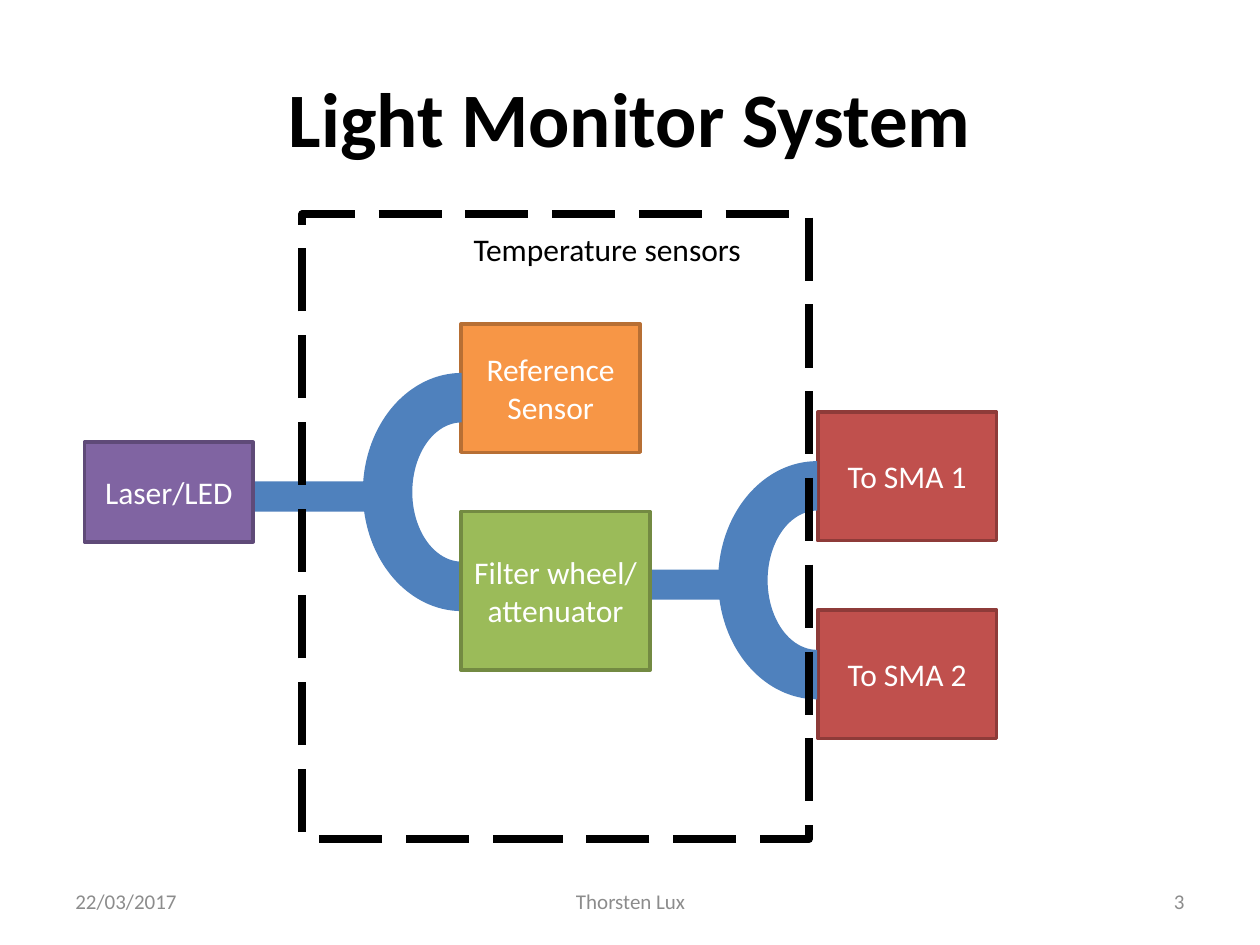
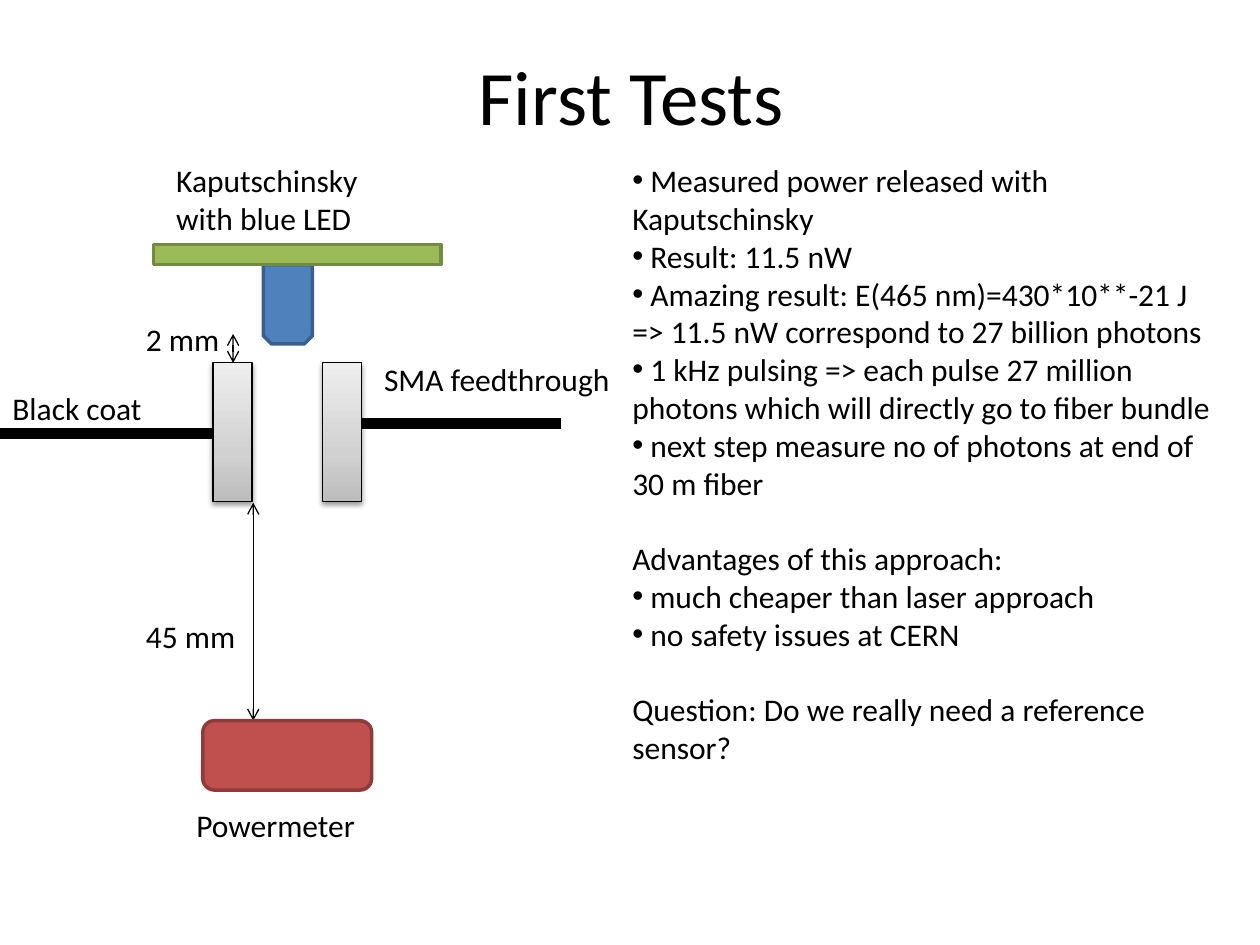
from copy import deepcopy

from lxml import etree
from pptx import Presentation
from pptx.dml.color import RGBColor
from pptx.enum import dml, shapes, text
from pptx.oxml.ns import qn
from pptx.util import Inches, Pt

COLORS = {
    "black": "000000", "white": "FFFFFF", "footer": "8C8C8C",
    "blue": "4F81BD", "blue_line": "3A5F8C",
    "green": "9BBB59", "green_line": "738A42",
    "red": "C0504D", "red_line": "8E3B39",
    "orange": "F79646", "orange_line": "B76F34",
    "purple": "8064A2", "purple_line": "5F4A78",
}
RGB = {name: RGBColor.from_string(value) for name, value in COLORS.items()}
METAL = [(0, "BDBDBD"), (0.35, "D1D1D1"), (1, "EEEEEE")]
FONT = "Calibri"
ALIGN = text.PP_ALIGN
MIDDLE = text.MSO_ANCHOR.MIDDLE
KIND = shapes.MSO_SHAPE


def write(shape, lines, color="black", size=18, align=ALIGN.LEFT, anchor=text.MSO_ANCHOR.TOP, bold=False):
    frame = shape.text_frame
    frame.word_wrap = True
    frame.vertical_anchor = anchor
    for index, line in enumerate(lines):
        paragraph = frame.add_paragraph() if index else frame.paragraphs[0]
        paragraph.alignment = align
        run = paragraph.add_run()
        run.text = line
        run.font.name = FONT
        run.font.size = Pt(size)
        run.font.bold = bold
        run.font.color.rgb = RGB[color]
    return frame


def add_block(slide, kind, box, fill=None, line=None, width=2, rotation=0):
    shape = slide.shapes.add_shape(kind, *map(Inches, box))
    shape.shadow.inherit = False
    shape.rotation = rotation
    if fill:
        shape.fill.solid()
        shape.fill.fore_color.rgb = RGB[fill]
    else:
        shape.fill.background()
    if line:
        shape.line.color.rgb = RGB[line]
        shape.line.width = Pt(width)
    else:
        shape.line.fill.background()
    return shape


presentation = Presentation()
presentation.slide_width = Inches(10)
presentation.slide_height = Inches(7.5)

slides = []
for heading, left, top, bold in [("Light Monitor System", 0.5, 0.3, True), ("First Tests", 0.51, 0.13, False)]:
    slide = presentation.slides.add_slide(presentation.slide_layouts[5])
    title = slide.shapes.title
    title.left, title.top, title.width, title.height = map(Inches, (left, top, 9, 1.25))
    write(title, [heading], size=44, align=ALIGN.CENTER, anchor=MIDDLE, bold=bold)
    slides.append(slide)
monitor, tests = slides

for label, box, color in [
    ("Reference Sensor", (3.66, 2.57, 1.42, 1.02), "orange"),
    ("To SMA 1", (6.49, 3.27, 1.42, 1.02), "red"),
    ("To SMA 2", (6.49, 4.84, 1.42, 1.02), "red"),
]:
    block = add_block(monitor, KIND.RECTANGLE, box, color, color + "_line")
    write(block, [label], "white", align=ALIGN.CENTER, anchor=MIDDLE)

sensors = monitor.shapes.add_textbox(Inches(3.66), Inches(1.78), Inches(2.99), Inches(0.4))
write(sensors, ["Temperature sensors"])

for left, top in [(5.15, 3.82), (2.33, 3.12)]:
    add_block(monitor, KIND.BLOCK_ARC, (left + 0.39, top, 1.89, 1.57), "blue", rotation=270)
    add_block(monitor, KIND.RECTANGLE, (left, top + 0.31, 0.24, 1.02), "blue", rotation=270)

enclosure = add_block(monitor, KIND.RECTANGLE, (2.4, 1.7, 4.02, 4.96), line="black", width=4.5)
enclosure.line.dash_style = dml.MSO_LINE.LONG_DASH

for label, box, color in [
    ("Laser/LED", (0.67, 3.51, 1.34, 0.79), "purple"),
    ("Filter wheel/ attenuator", (3.66, 4.06, 1.5, 1.26), "green"),
]:
    block = add_block(monitor, KIND.RECTANGLE, box, color, color + "_line")
    write(block, [label], "white", align=ALIGN.CENTER, anchor=MIDDLE)

for label, left, width, align in [
    ("22/03/2017", 0.5, 2.33, ALIGN.LEFT),
    ("3", 7.17, 2.33, ALIGN.RIGHT),
    ("Thorsten Lux", 3.42, 3.17, ALIGN.CENTER),
]:
    footer = monitor.shapes.add_textbox(Inches(left), Inches(6.95), Inches(width), Inches(0.4))
    write(footer, [label], "footer", 12, align, MIDDLE)

add_block(tests, KIND.SNIP_2_SAME_RECTANGLE, (2.09, 2.1, 0.39, 0.63), "blue", "blue_line", rotation=180)
add_block(tests, KIND.RECTANGLE, (1.22, 1.94, 2.28, 0.16), "green", "green_line")

for left in (1.69, 2.56):
    wall = add_block(tests, KIND.RECTANGLE, (left, 2.88, 0.31, 1.1), line="black", width=0.75)
    wall.fill.gradient()
    wall.fill.gradient_angle = 90
    properties = wall._element.spPr
    stop_list = properties.find(".//" + qn("a:gsLst"))
    stop_list.append(deepcopy(stop_list[0]))
    for stop, (position, color) in zip(wall.fill.gradient_stops, METAL):
        stop.position = position
        stop.color.rgb = RGBColor.from_string(color)
    shadow = etree.SubElement(
        properties.find(qn("a:effectLst")), qn("a:outerShdw"),
        blurRad=str(Pt(3.1)), dist=str(Pt(1.6)), dir="5400000", rotWithShape="0")
    shade = etree.SubElement(shadow, qn("a:srgbClr"), val=COLORS["black"])
    etree.SubElement(shade, qn("a:alpha"), val="38000")

for start_x, start_y, end_x, end_y, width, arrows in [
    (0, 3.44, 1.69, 3.44, 6, False),
    (2.87, 3.36, 4.45, 3.36, 6, False),
    (1.85, 2.65, 1.85, 2.88, 0.75, True),
    (2.01, 3.99, 2.01, 5.72, 0.75, True),
]:
    connector = tests.shapes.add_connector(
        shapes.MSO_CONNECTOR.STRAIGHT, *map(Inches, (start_x, start_y, end_x, end_y)))
    connector.line.color.rgb = RGB["black"]
    connector.line.width = Pt(width)
    properties = connector._element.spPr
    if arrows:
        for end in ("a:headEnd", "a:tailEnd"):
            etree.SubElement(properties.find(qn("a:ln")), qn(end), type="arrow")
    etree.SubElement(properties, qn("a:effectLst"))

add_block(tests, KIND.ROUNDED_RECTANGLE, (1.61, 5.72, 1.34, 0.55), "red", "red_line")

for label, box in [
    ("SMA feedthrough", (2.95, 2.81, 2.36, 0.4)),
    ("Black coat", (0, 3.04, 1.46, 0.4)),
    ("Kaputschinsky with blue LED", (1.3, 1.23, 1.89, 0.71)),
    ("Powermeter", (1.46, 6.35, 1.73, 0.4)),
    ("2 mm", (1.06, 2.49, 1.1, 0.4)),
    ("45 mm", (1.06, 4.85, 1.1, 0.4)),
]:
    write(tests.shapes.add_textbox(*map(Inches, box)), [label])

findings = [
    " Measured power released with Kaputschinsky",
    " Result: 11.5 nW",
    " Amazing result: E(465 nm)=430*10**-21 J => 11.5 nW correspond to 27 billion photons",
    " 1 kHz pulsing => each pulse 27 million photons which will directly go to fiber bundle",
    " next step measure no of photons at end of 30 m fiber",
    "Advantages of this approach:",
    " much cheaper than laser approach",
    " no safety issues at CERN",
    "Question: Do we really need a reference sensor?",
]
notes_box = tests.shapes.add_textbox(Inches(4.92), Inches(1.23), Inches(4.8), Inches(4.95))
for paragraph in write(notes_box, findings).paragraphs:
    if paragraph.text.startswith(" "):
        properties = paragraph._p.get_or_add_pPr()
        etree.SubElement(properties, qn("a:buFont"), typeface="Arial")
        etree.SubElement(properties, qn("a:buChar"), char="•")
    else:
        paragraph.space_before = Pt(21.6)

presentation.save("out.pptx")
